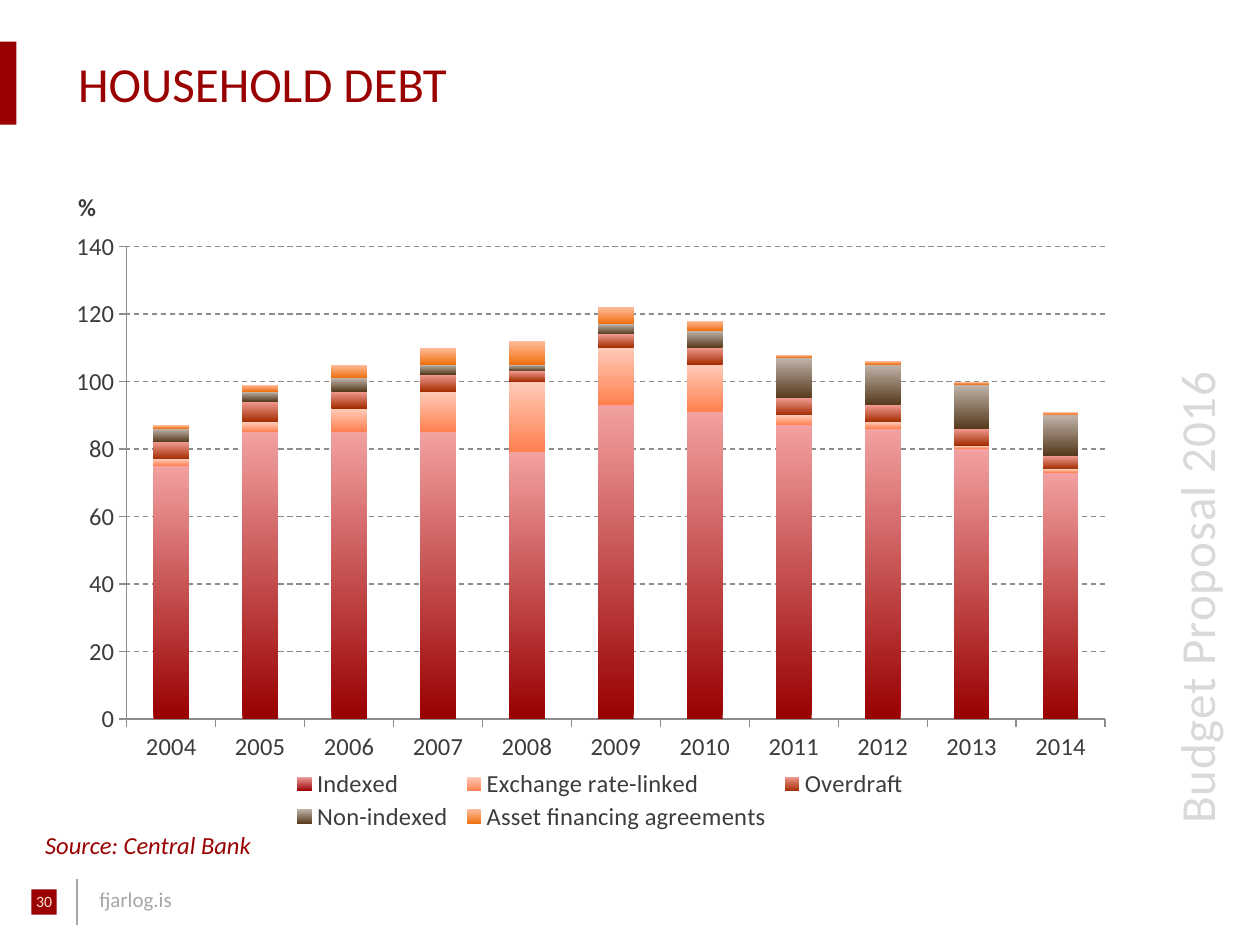
from lxml import etree
from pptx import Presentation
from pptx.chart.data import CategoryChartData
from pptx.dml.color import RGBColor
from pptx.enum.chart import XL_CHART_TYPE, XL_LEGEND_POSITION, XL_TICK_LABEL_POSITION, XL_TICK_MARK
from pptx.enum.dml import MSO_LINE
from pptx.enum.shapes import MSO_CONNECTOR, MSO_SHAPE
from pptx.enum.text import MSO_ANCHOR, PP_ALIGN
from pptx.oxml.ns import qn
from pptx.util import Inches, Pt

STACKED = XL_CHART_TYPE.COLUMN_STACKED
BOTTOM = XL_LEGEND_POSITION.BOTTOM
LOW = XL_TICK_LABEL_POSITION.LOW
OUTSIDE = XL_TICK_MARK.OUTSIDE
DASH = MSO_LINE.DASH
STRAIGHT = MSO_CONNECTOR.STRAIGHT
RECTANGLE = MSO_SHAPE.RECTANGLE
TOP, MIDDLE = MSO_ANCHOR.TOP, MSO_ANCHOR.MIDDLE
LEFT, CENTER = PP_ALIGN.LEFT, PP_ALIGN.CENTER

RED, GREY, DARK, AXIS_GREY = "990000", "A6A6A6", "3C3C3B", "8C8C8C"


def color(value):
    return RGBColor.from_string(value)


def place(element, index, **fractions):
    """Give a chart part a manual layout, as fractions of the chart area."""
    for old_layout in element.findall(qn("c:layout")):
        element.remove(old_layout)
    layout = etree.Element(qn("c:layout"))
    manual = etree.SubElement(layout, qn("c:manualLayout"))
    if index == 0:
        etree.SubElement(manual, qn("c:layoutTarget")).set("val", "inner")
    for mode in ("xMode", "yMode"):
        etree.SubElement(manual, qn("c:" + mode)).set("val", "edge")
    for name, value in fractions.items():
        etree.SubElement(manual, qn("c:" + name)).set("val", str(value))
    element.insert(index, layout)


presentation = Presentation()
presentation.slide_width, presentation.slide_height = Inches(10), Inches(7.5)
slide = presentation.slides.add_slide(presentation.slide_layouts[6])

# Red page-number square and title bar
for box in [(0.25, 7.06, 0.2, 0.2), (0, 0.33, 0.13, 0.66)]:
    shape = slide.shapes.add_shape(RECTANGLE, *map(Inches, box))
    shape.shadow.inherit = False
    shape.fill.solid()
    shape.fill.fore_color.rgb = color(RED)
    shape.line.fill.background()

# Footer divider
divider = slide.shapes.add_connector(
    STRAIGHT, Inches(0.61), Inches(6.98), Inches(0.61), Inches(7.34))
divider.line.color.rgb = color(GREY)
divider.line.width = Pt(1)
etree.SubElement(divider._element.spPr, qn("a:effectLst"))

# Text: wording, box, size, colour, and what differs from the plain setting
texts = [
    ("Budget Proposal 2016", (6.78, 3.64, 5.42, 0.57), 28, "D9D9D9",
     {"rotation": 270, "spacing": 50}),
    ("fjarlog.is", (0.69, 6.99, 1.87, 0.3), 12, GREY, {}),
    ("HOUSEHOLD DEBT", (0.5, 0.33, 9.06, 0.66), 28, RED,
     {"anchor": MIDDLE, "margins": (0.12, 0.06)}),
    ("30", (0, 7.02, 0.7, 0.47), 9, "FFE6DC",
     {"align": CENTER, "margins": (0.12, 0.06)}),
    ("Source: Central Bank", (0.26, 6.54, 7.78, 0.34), 14, RED, {"italic": True}),
]
for wording, box, size, text_color, options in texts:
    shape = slide.shapes.add_textbox(*map(Inches, box))
    shape.rotation = options.get("rotation", 0)
    side, edge = map(Inches, options.get("margins", (0.1, 0.05)))
    frame_format = {
        "word_wrap": True, "vertical_anchor": options.get("anchor", TOP),
        "margin_left": side, "margin_right": side,
        "margin_top": edge, "margin_bottom": edge,
    }
    for name, value in frame_format.items():
        setattr(shape.text_frame, name, value)
    paragraph = shape.text_frame.paragraphs[0]
    paragraph.alignment = options.get("align", LEFT)
    run = paragraph.add_run()
    run.text = wording
    font_format = {"name": "Calibri", "size": Pt(size), "italic": options.get("italic", False)}
    for name, value in font_format.items():
        setattr(run.font, name, value)
    run.font.color.rgb = color(text_color)
    if "spacing" in options:
        run.font._element.set("spc", str(options["spacing"]))

# Stacked debt chart: name, values, bottom colour, top colour
debt_types = [
    ("Indexed", (75, 85, 85, 85, 79, 93, 91, 87, 86, 80, 73), RED, "F2A0A0"),
    ("Exchange rate-linked", (2, 3, 7, 12, 21, 17, 14, 3, 2, 1, 1), "FF804F", "FFCBB9"),
    ("Overdraft", (5, 6, 5, 5, 3, 4, 5, 5, 5, 5, 4), "A32D01", "F09A90"),
    ("Non-indexed", (4, 3, 4, 3, 2, 3, 5, 12, 12, 13, 12), "55391C", "C0B4AA"),
    ("Asset financing agreements", (1, 2, 4, 5, 7, 5, 3, 1, 1, 1, 1), "F07010", "FFBC9C"),
]
chart_data = CategoryChartData()
chart_data.categories = [str(year) for year in range(2004, 2015)]
for name, values, *_ in debt_types:
    chart_data.add_series(name, values)
chart = slide.shapes.add_chart(
    STACKED, Inches(0.5), Inches(1.26), Inches(8.44), Inches(5.36), chart_data).chart
chart.has_title = False
chart.font.name, chart.font.size = "Calibri", Pt(14)
chart.font.color.rgb = color(DARK)

plot = chart.plots[0]
plot.gap_width, plot.overlap, plot.vary_by_categories = 150, 100, False
for series, (_, _, bottom_color, top_color) in zip(plot.series, debt_types):
    fill = series.format.fill
    fill.gradient()
    fill.gradient_angle = 90
    for stop, stop_color in zip(fill.gradient_stops, (bottom_color, top_color)):
        stop.color.rgb = color(stop_color)

value_axis, category_axis = chart.value_axis, chart.category_axis
for name, value in {"minimum_scale": 0, "maximum_scale": 140, "major_unit": 20}.items():
    setattr(value_axis, name, value)
category_axis.tick_label_position = LOW
for axis in (value_axis, category_axis):
    axis.major_tick_mark = OUTSIDE
    axis.format.line.color.rgb = color(AXIS_GREY)
    axis.format.line.width = Pt(0.75)
gridline = value_axis.major_gridlines.format.line
gridline.color.rgb = color(AXIS_GREY)
gridline.width, gridline.dash_style = Pt(0.75), DASH

axis_title = value_axis.axis_title
axis_title.text_frame.text = "%"
axis_title.text_frame._txBody.bodyPr.set("rot", "0")
title_font = axis_title.text_frame.paragraphs[0].runs[0].font
for name, value in {"name": "Calibri", "size": Pt(14), "bold": True}.items():
    setattr(title_font, name, value)
title_font.color.rgb = color(DARK)

chart.has_legend = True
chart.legend.position, chart.legend.include_in_layout = BOTTOM, False

place(chart._chartSpace.chart.plotArea, 0, x=0.06, y=0.13, w=0.92, h=0.7)
place(axis_title._element, 1, x=0.01, y=0.04)
place(chart.legend._element, 1, x=0.21, y=0.9, w=0.59, h=0.1)

presentation.save("out.pptx")
